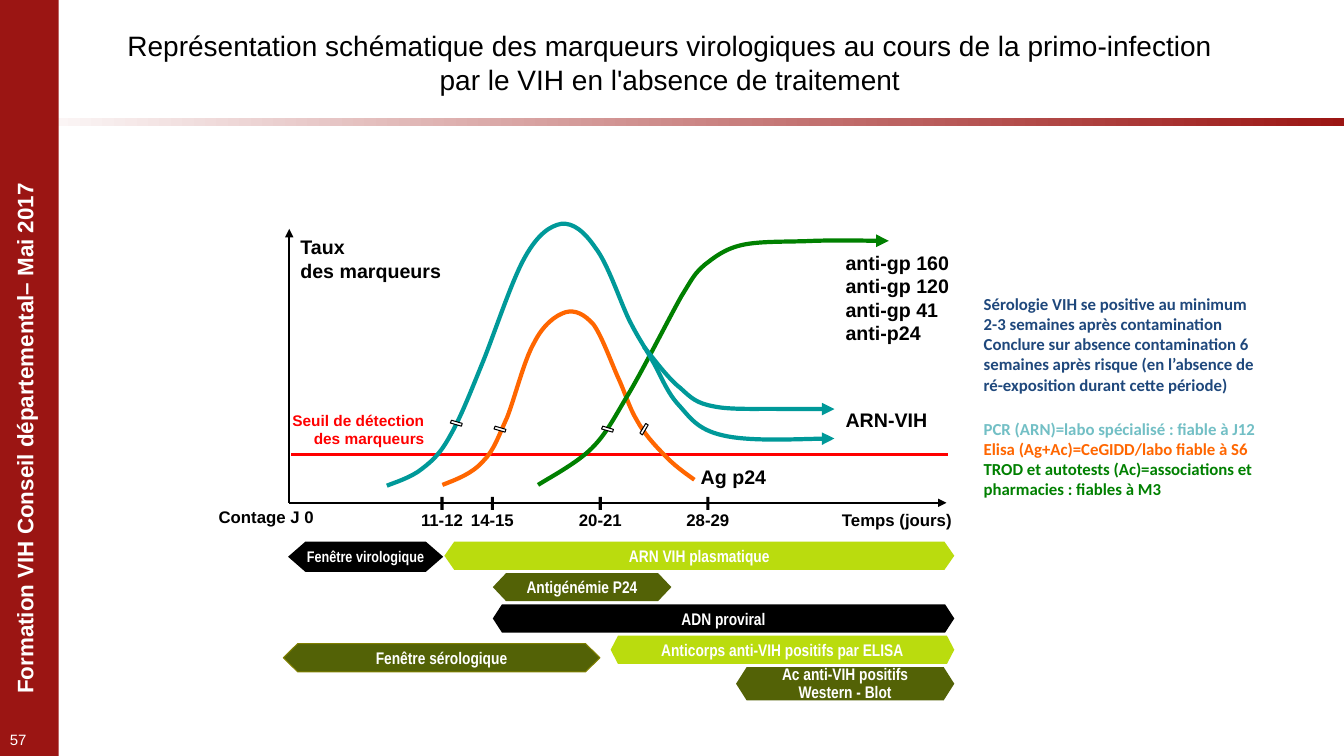
from lxml.etree import SubElement
from pptx import Presentation
from pptx.dml.color import RGBColor
from pptx.enum.shapes import MSO_CONNECTOR, MSO_SHAPE
from pptx.enum.text import MSO_ANCHOR, PP_ALIGN
from pptx.oxml.ns import qn
from pptx.util import Cm, Pt

BLACK = RGBColor(0x00, 0x00, 0x00)
WHITE = RGBColor(0xFF, 0xFF, 0xFF)
CRIMSON = RGBColor(0x9B, 0x15, 0x13)
RED = RGBColor(0xFF, 0x00, 0x00)
ORANGE = RGBColor(0xFF, 0x66, 0x00)
GREEN = RGBColor(0x00, 0x80, 0x00)
TEAL = RGBColor(0x00, 0x99, 0x99)
LIGHT_TEAL = RGBColor(0x72, 0xBF, 0xC5)
NAVY = RGBColor(0x1F, 0x48, 0x7C)
LIME = RGBColor(0xBA, 0xDC, 0x0E)
OLIVE = RGBColor(0x53, 0x62, 0x06)
OLIVE_EDGE = RGBColor(0x80, 0x80, 0x00)

# Each curve: colour, arrowhead, then a start point and Bézier triples (cm in the graph)
CURVES = [
    (ORANGE, False, [
        (3.86, 6.62), (4.24, 6.47), (4.6, 6.34), (4.88, 6.03), (5.16, 5.75), (5.26, 5.42),
        (5.49, 4.92), (5.69, 4.41), (5.92, 3.47), (6.17, 3.04), (6.4, 2.58), (6.71, 2.35),
        (6.96, 2.27), (7.21, 2.2), (7.44, 2.32), (7.67, 2.58), (7.87, 2.86), (8.1, 3.49),
        (8.28, 3.9), (8.46, 4.28), (8.56, 4.66), (8.76, 4.99), (8.94, 5.32), (9.19, 5.6),
        (9.45, 5.86), (9.68, 6.11), (9.93, 6.29), (10.21, 6.49)]),
    (GREEN, True, [
        (6.27, 6.62), (6.5, 6.47), (7.24, 6.08), (7.62, 5.7), (8, 5.32), (8.18, 4.94),
        (8.56, 4.31), (8.94, 3.67), (9.58, 2.4), (9.88, 1.87), (10.21, 1.33), (10.21, 1.31),
        (10.46, 1.08), (10.72, 0.88), (10.97, 0.67), (11.43, 0.57), (11.89, 0.47), (12.6, 0.5),
        (13.21, 0.47), (13.84, 0.45), (14.71, 0.47), (15.11, 0.47)]),
    (TEAL, True, [
        (2.46, 6.64), (2.62, 6.57), (3.07, 6.44), (3.35, 6.21), (3.61, 6.01), (3.81, 5.83),
        (4.06, 5.37), (4.32, 4.92), (4.57, 4.28), (4.88, 3.52), (5.18, 2.78), (5.61, 1.46),
        (5.94, 0.88), (6.27, 0.29), (6.58, 0.09), (6.86, 0.04), (7.16, 0.01), (7.44, 0.24),
        (7.72, 0.65), (8.03, 1.05), (8.33, 1.97), (8.56, 2.45), (8.79, 2.91), (8.94, 3.11),
        (9.14, 3.47), (9.35, 3.82), (9.5, 4.26), (9.8, 4.59), (10.08, 4.89), (10.26, 5.22),
        (10.92, 5.37), (11.58, 5.53), (13.16, 5.45), (13.74, 5.45)]),
    (TEAL, True, [
        (8.94, 3.14), (9.09, 3.32), (9.55, 3.95), (9.86, 4.18), (10.13, 4.43), (10.26, 4.56),
        (10.69, 4.64), (11.13, 4.74), (11.96, 4.69), (12.47, 4.71), (12.98, 4.71),
        (13.36, 4.71), (13.74, 4.71)]),
]
TICKS = [(3.85, "11-12"), (5.12, "14-15"), (7.84, "20-21"), (10.55, "28-29")]
BREAKS = [(4.06, 4.99, 0), (5.16, 5.14, 0), (7.87, 5.14, 0), (8.79, 5.14, 284.6)]
BREAK_OUTLINE = [(0.3, 0.08), (0.03, 0), (0, 0.07), (0.28, 0.15)]
LABELS = [
    ("Taux\ndes marqueurs", 0.28, 0.32, 4, 1.19, 14),
    ("anti-gp 160\nanti-gp 120\nanti-gp 41\nanti-p24", 14.02, 0.72, 3, 2.39, 14),
    ("ARN-VIH", 14.02, 4.69, 2.4, 0.61, 14),
    ("Ag p24", 10.37, 6.11, 2.4, 0.61, 14),
    ("Contage J 0", -1.78, 7.18, 2.7, 0.5, 12),
    ("Temps (jours)", 13.93, 7.25, 3.1, 0.5, 12),
]
# text, left, top, width, height, point depth, fill, edge, size
BARS = [
    ("Fenêtre virologique", 0.12, 0, 3.91, 0.76, 0.575, BLACK, None, 11),
    ("ARN VIH plasmatique", 4.06, 0, 12.85, 0.71, 0.348, LIME, None, 12),
    ("Antigénémie P24", 5.28, 0.79, 4.5, 0.71, 0.474, OLIVE, None, 12),
    ("ADN proviral", 5.28, 1.58, 11.63, 0.71, 0.324, BLACK, None, 12),
    ("Anticorps anti-VIH positifs par ELISA", 8.25, 2.37, 8.66, 0.71, 0.26, LIME, None, 12),
    ("Fenêtre sérologique", 0, 2.57, 7.98, 0.71, 0.51, OLIVE, OLIVE_EDGE, 12),
    ("Ac anti-VIH positifs\nWestern - Blot", 11.41, 3.16, 5.5, 0.84, 0.318, OLIVE, None, 12),
]
NOTES = [
    [("Sérologie VIH se positive au minimum 2-3 semaines après contamination", NAVY)],
    [("Conclure sur absence contamination 6 semaines après risque "
      "(en l’absence de ré-exposition durant cette période)", NAVY)],
    [("PCR (ARN)=labo spécialisé : fiable à J12 ", LIGHT_TEAL),
     ("Elisa (Ag+Ac)=CeGIDD/labo fiable à S6", ORANGE)],
    [("TROD et autotests (Ac)=associations et pharmacies : fiables à M3", GREEN)],
]


def cm_box(*lengths):
    return [Cm(v) for v in lengths]


def add_run(p, text, color, **fmt):
    r = p.add_run()
    r.text = text
    for name, value in {"name": "Arial", "bold": True, **fmt}.items():
        setattr(r.font, name, value)
    r.font.color.rgb = color


def fill_text(tf, text, color, align=PP_ALIGN.LEFT, spacing=None, wrap=False, inset=0, **fmt):
    """Write one paragraph per line of text, with equal insets at the sides."""
    tf.margin_left = tf.margin_right = Cm(inset)
    tf.margin_top = tf.margin_bottom = 0
    tf.word_wrap = wrap
    for i, line in enumerate(text.split("\n")):
        p = tf.add_paragraph() if i else tf.paragraphs[0]
        p.alignment, p.line_spacing = align, spacing
        add_run(p, line, color, **fmt)


def add_label(slide, text, box, color=BLACK, **fmt):
    tb = slide.shapes.add_textbox(*cm_box(*box))
    fill_text(tb.text_frame, text, color, **fmt)
    return tb


def add_block(slide, shape_type, box, fill, edge=None):
    sp = slide.shapes.add_shape(shape_type, *cm_box(*box))
    sp.shadow.inherit = False
    sp.fill.solid()
    sp.fill.fore_color.rgb = fill
    if edge is None:
        sp.line.fill.background()
    else:
        sp.line.color.rgb, sp.line.width = edge, Pt(0.75)
    return sp


def style_line(sp, color, width, arrow):
    sp.line.color.rgb, sp.line.width = color, Pt(width)
    if arrow:
        SubElement(sp.line._get_or_add_ln(), qn("a:tailEnd"), type="triangle")


def add_line(slide, ends, color, width, arrow):
    cxn = slide.shapes.add_connector(MSO_CONNECTOR.STRAIGHT, *cm_box(*ends))
    style_line(cxn, color, width, arrow)
    SubElement(cxn._element.spPr, qn("a:effectLst"))


def add_outline(slide, left, top, points, close):
    pts = [(Cm(left + x), Cm(top + y)) for x, y in points]
    fb = slide.shapes.build_freeform(*pts[0])
    fb.add_line_segments(pts[1:], close=close)
    sp = fb.convert_to_shape()
    sp.shadow.inherit = False
    return sp


def add_curve(slide, left, top, color, arrow, points):
    """Turn each three segments of an open outline into one Bézier segment."""
    sp = add_outline(slide, left, top, points, False)
    sp.fill.background()
    style_line(sp, color, 3, arrow)
    outline = sp._element.xpath(".//a:path")[0]
    segments = outline.findall(qn("a:lnTo"))
    for i in range(0, len(segments), 3):
        bezier = SubElement(outline, qn("a:cubicBezTo"))
        for segment in segments[i:i + 3]:
            bezier.append(segment[0])
            outline.remove(segment)


def add_frame(slide, width, height):
    """Sidebar, gradient rule, page number and slide title."""
    rule = add_block(slide, MSO_SHAPE.RECTANGLE, (0, 2.97, width, 0.2), CRIMSON)
    rule.fill.gradient()
    rule.fill.gradient_angle = 0
    for stop, color in zip(rule.fill.gradient_stops, (WHITE, CRIMSON)):
        stop.color.rgb = color
    add_block(slide, MSO_SHAPE.RECTANGLE, (0, 0, 1.48, height), CRIMSON)
    tb = add_label(slide, "Formation VIH Conseil départemental– Mai 2017", (-6.22, 10.7, 13.69, 0.7),
                   WHITE, align=PP_ALIGN.CENTER, size=Pt(16))
    tb.rotation = 270
    add_label(slide, "57", (0.25, 18.42, 1, 0.46), WHITE, size=Pt(10.7), bold=False)
    title = slide.shapes.title
    title.left, title.top, title.width, title.height = cm_box(2.46, 0.46, 28.85, 2.21)
    fill_text(title.text_frame, "Représentation schématique des marqueurs virologiques au cours de la "
              "primo-infection par le VIH en l'absence de traitement", BLACK,
              align=PP_ALIGN.CENTER, wrap=True, inset=0.25, size=Pt(20), bold=False)
    title.text_frame.vertical_anchor = MSO_ANCHOR.MIDDLE


def add_graph(slide, left, top, width, height):
    bottom, threshold = top + height, top + 5.86
    add_line(slide, (left + 0.05, threshold, left + width + 0.05, threshold), RED, 2, False)
    for curve in CURVES:
        add_curve(slide, left, top, *curve)
    for x, y, angle in BREAKS:
        mark = add_outline(slide, left + x, top + y, BREAK_OUTLINE, True)
        mark.fill.solid()
        mark.fill.fore_color.rgb = WHITE
        style_line(mark, BLACK, 0.75, False)
        mark.rotation = angle
    for x, days in TICKS:
        add_block(slide, MSO_SHAPE.RECTANGLE, (left + x - 0.04, bottom - 0.15, 0.08, 0.33), BLACK)
        add_label(slide, days, (left + x - 0.6, bottom + 0.18, 1.2, 0.5),
                  align=PP_ALIGN.CENTER, size=Pt(12))
    for text, x, y, w, h, size in LABELS:
        add_label(slide, text, (left + x, top + y, w, h), size=Pt(size))
    add_label(slide, "Seuil de détection\ndes marqueurs", (left + 0.05, top + 4.76, 3.36, 0.94),
              RED, align=PP_ALIGN.RIGHT, size=Pt(11))
    for end in ((left, top + 0.17), (left + width, bottom)):
        add_line(slide, (left, bottom, *end), BLACK, 1.5, True)


def add_bars(slide, left, top):
    for text, x, y, w, h, depth, fill, edge, size in BARS:
        sp = add_block(slide, MSO_SHAPE.LEFT_RIGHT_ARROW, (left + x, top + y, w, h), fill, edge)
        sp.adjustments[0], sp.adjustments[1] = 1, depth
        fill_text(sp.text_frame, text, WHITE, align=PP_ALIGN.CENTER, wrap=True,
                  spacing=0.9 if "\n" in text else None, name="Arial Narrow", size=Pt(size))
        sp.text_frame.vertical_anchor = MSO_ANCHOR.MIDDLE


def add_notes_column(slide, *box):
    tf = add_label(slide, "", box, wrap=True).text_frame
    tf.clear()
    for i, parts in enumerate(NOTES):
        p = tf.add_paragraph() if i else tf.paragraphs[0]
        if i == 2:
            p.space_before = Pt(17)
        for text, color in parts:
            add_run(p, text, color, name="Calibri", size=Pt(12))


def main():
    prs = Presentation()
    prs.slide_width, prs.slide_height = cm_box(33.87, 19.05)
    slide = prs.slides.add_slide(prs.slide_layouts[5])
    add_frame(slide, 33.87, 19.05)
    add_graph(slide, 7.29, 5.6, 16.56, 7.07)
    add_bars(slide, 7.14, 13.65)
    add_notes_column(slide, 24.79, 7.4, 7.05, 5.21)
    prs.save("out.pptx")


if __name__ == "__main__":
    main()
